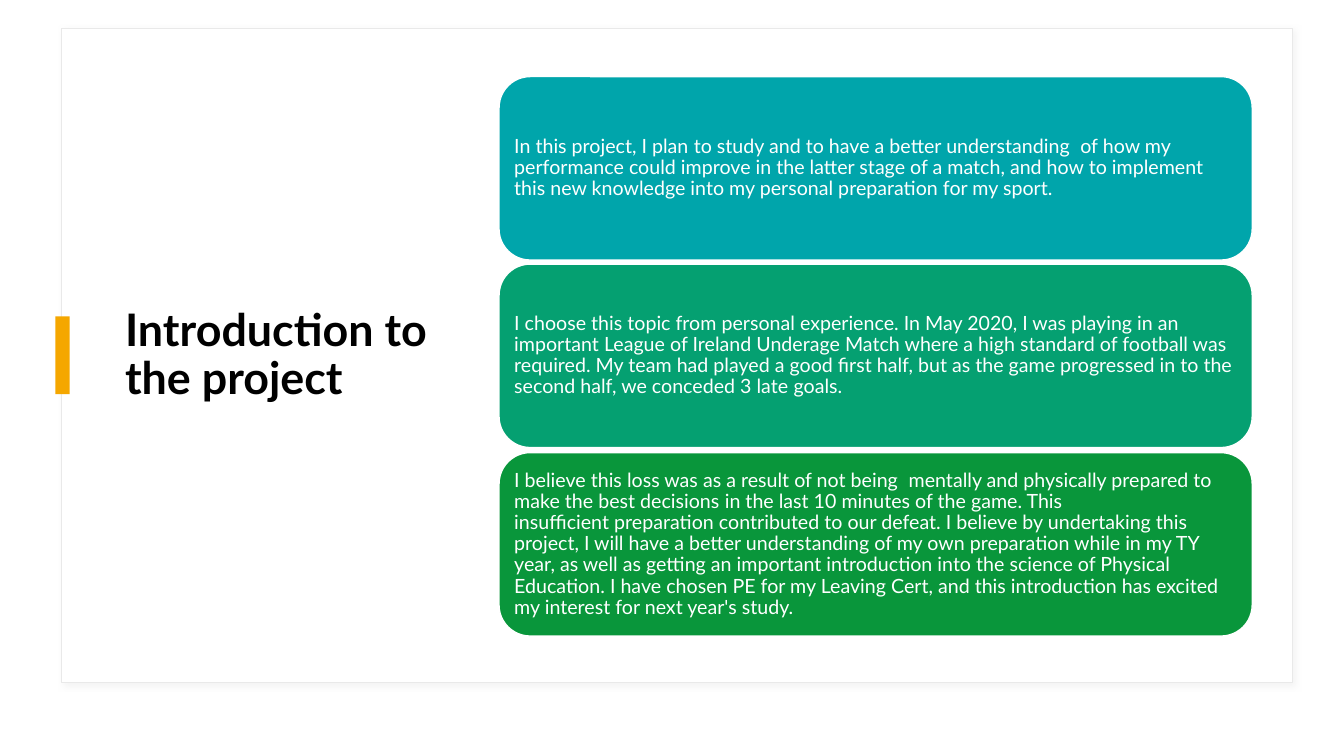
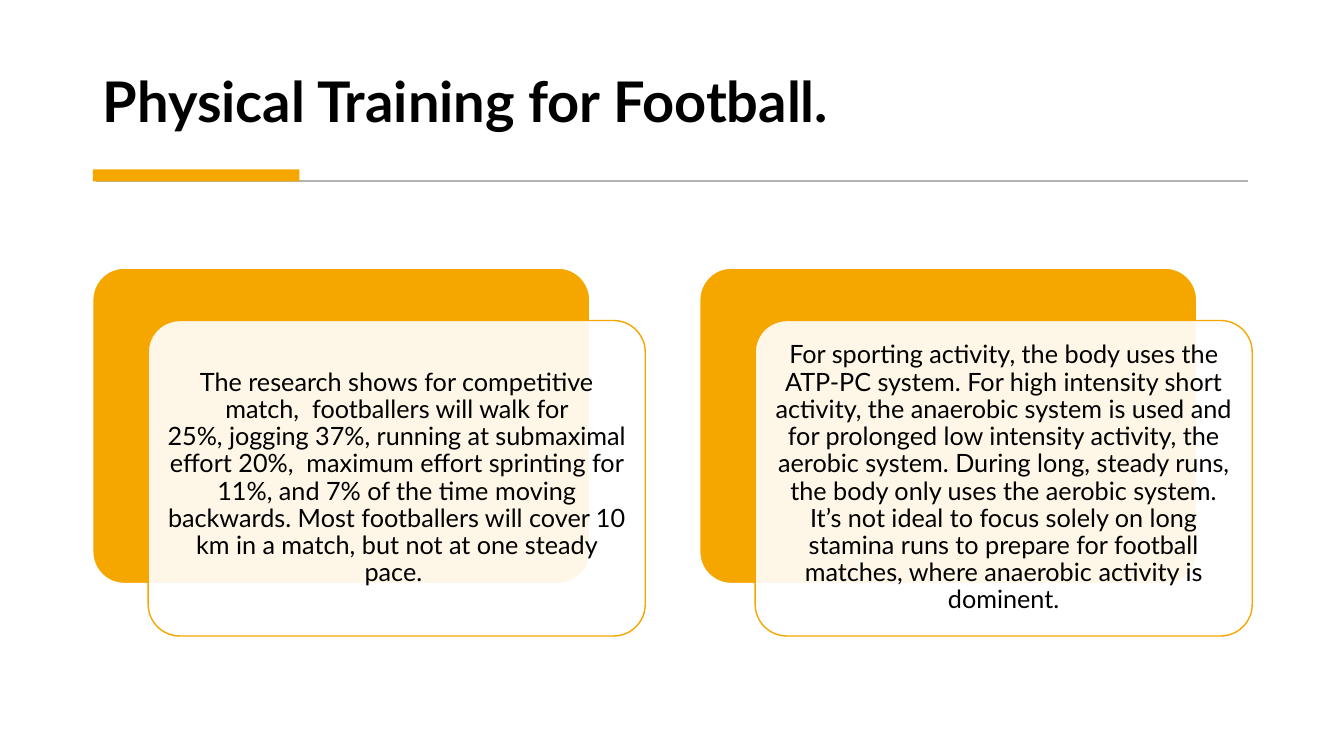
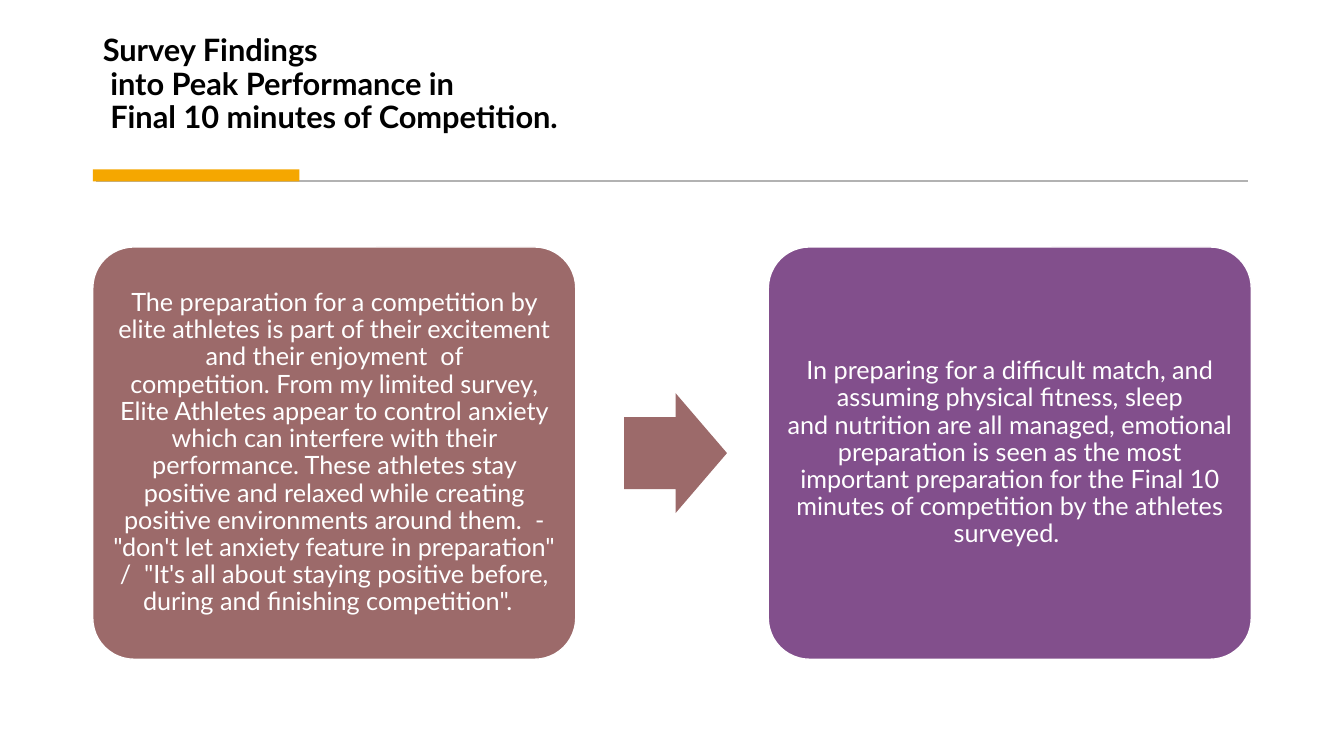
from dataclasses import dataclass
from typing import Optional

from lxml import etree
from pptx import Presentation
from pptx import slide as slides
from pptx import util as u
from pptx.dml.color import RGBColor
from pptx.enum import shapes, text
from pptx.oxml import ns
from pptx.shapes import autoshape
from pptx.text import text as pptx_text

EMU_PER_PX = 9144
HARD_SPACE_MARK = "~"
HARD_SPACE = chr(160)


@dataclass(frozen=True)
class Theme:
    font: str = "Lato"
    ink: str = "000000"
    paper: str = "FFFFFF"
    accent: str = "F5A700"
    rule: str = "B2B2B2"
    frame: str = "E9E9E9"
    shadow: str = "D9D9D9"
    teal: str = "00A5AB"
    jade: str = "05A071"
    green: str = "09963B"
    rose: str = "9C6A6A"
    purple: str = "824F8C"
    side_title: int = 32
    top_title: int = 40
    long_title: int = 22
    intro: int = 14
    body: int = 18


@dataclass(frozen=True)
class Box:
    left: int
    top: int
    width: int
    height: int

    def emu(self) -> tuple[int, int, int, int]:
        return px(self.left), px(self.top), px(self.width), px(self.height)

    def moved(self, right: int = 0, down: int = 0) -> "Box":
        return Box(self.left + right, self.top + down, self.width, self.height)


@dataclass(frozen=True)
class Card:
    words: str
    fill: str


THEME = Theme()
SHAPE = shapes.MSO_SHAPE
ALIGN = text.PP_ALIGN
ANCHOR = text.MSO_ANCHOR

INTRO_CARDS = (
    Card(
        "In this project, I plan~to study and to have a better understanding~ of how my "
        "performance could improve in the latter stage of a match, and how to implement this "
        "new knowledge into my personal preparation for my sport.~",
        THEME.teal,
    ),
    Card(
        "I choose this topic from personal experience. In May 2020, I was playing in an "
        "important League of Ireland Underage Match where a high standard of football was "
        "required. My team had played a good first half, but as the game progressed in to the "
        "second half, we conceded 3 late~goals.~",
        THEME.jade,
    ),
    Card(
        "I believe this loss was as a result of not being~ mentally and physically prepared to "
        "make the best decisions~in the last 10 minutes of the game. This "
        "insufficient~preparation contributed to our defeat. I believe by undertaking this "
        "project, I will have a better understanding of my own preparation while in my TY year, "
        "as well as getting an important introduction into the science of Physical "
        "Education.~I have chosen PE for my Leaving Cert, and this introduction has excited my "
        "interest for next year's study.~",
        THEME.green,
    ),
)

TRAINING_TEXTS = (
    "The research shows for competitive match,~ footballers will walk for 25%,~jogging 37%, "
    "running at submaximal effort~20%,~ maximum effort~sprinting for 11%, and 7% of the "
    "time~moving backwards. Most footballers will cover 10 km in a match,~but not at one "
    "steady pace.~",
    "For sporting activity, the~body uses~the ATP-PC system. For high intensity short "
    "activity, the anaerobic system is used and for prolonged low intensity activity, the "
    "aerobic system.~During long, steady runs, the body only uses the aerobic system. It’s "
    "not ideal to focus solely on long stamina runs to prepare for football matches, where "
    "anaerobic~activity~is dominent.",
)

SURVEY_CARDS = (
    Card(
        "The preparation for a competition by elite athletes is part of their excitement and "
        "their enjoyment~ of competition.~From my limited survey, Elite Athletes appear to "
        "control anxiety which can interfere~with their performance. These athletes stay "
        "positive and relaxed while creating positive environments around them. ~- \"don't let "
        "anxiety feature in preparation\" /~ \"It's all about staying positive before, during "
        "and finishing competition\".~~",
        THEME.rose,
    ),
    Card(
        "In preparing for a difficult match, and assuming physical fitness,~sleep "
        "and~nutrition are all managed, emotional preparation is seen as the most "
        "important~preparation for the Final~10 minutes~of competition by the athletes "
        "surveyed.~",
        THEME.purple,
    ),
)


def px(length: int) -> int:
    return length * EMU_PER_PX


def rgb(color: str) -> RGBColor:
    return RGBColor.from_string(color)


def write_text(frame: pptx_text.TextFrame, words: str, size: int, color: str, align: ALIGN,
               anchor: ANCHOR, bold: bool = False) -> None:
    frame.text = words.replace(HARD_SPACE_MARK, HARD_SPACE)
    frame.word_wrap = True
    frame.auto_size = text.MSO_AUTO_SIZE.NONE
    frame.vertical_anchor = anchor
    for paragraph in frame.paragraphs:
        paragraph.alignment = align
        paragraph.line_spacing = 0.9
        for run in paragraph.runs:
            run.font.name = THEME.font
            run.font.size = u.Pt(size)
            run.font.bold = bold
            run.font.color.rgb = rgb(color)


def add_title(slide: slides.Slide, words: str, box: Box, size: int, anchor: ANCHOR) -> None:
    title = slide.shapes.title
    title.left, title.top, title.width, title.height = box.emu()
    write_text(title.text_frame, words, size, THEME.ink, ALIGN.LEFT, anchor, bold=True)


def add_block(slide: slides.Slide, kind: SHAPE, box: Box, fill: str,
              line: Optional[str] = None) -> autoshape.Shape:
    shape = slide.shapes.add_shape(kind, *box.emu())
    shape.shadow.inherit = False
    shape.fill.solid()
    shape.fill.fore_color.rgb = rgb(fill)
    if line:
        shape.line.color.rgb = rgb(line)
        shape.line.width = u.Pt(1)
    else:
        shape.line.fill.background()
    return shape


def add_card(slide: slides.Slide, box: Box, fill: str, line: str = THEME.paper,
             corner: float = 0.1) -> autoshape.Shape:
    card = add_block(slide, SHAPE.ROUNDED_RECTANGLE, box, fill, line)
    card.adjustments[0] = corner
    return card


def write_card(card: autoshape.Shape, words: str, size: int, color: str, align: ALIGN,
               inset: int) -> None:
    frame = card.text_frame
    frame.margin_left = frame.margin_right = px(inset)
    frame.margin_top = frame.margin_bottom = px(inset)
    write_text(frame, words, size, color, align, ANCHOR.MIDDLE)


def set_opacity(color_element: etree._Element, percent: int) -> None:
    etree.SubElement(color_element, ns.qn("a:alpha"), val=str(percent * 1000))


def add_soft_shadow(shape: autoshape.Shape) -> None:
    effects = shape.element.spPr.find(ns.qn("a:effectLst"))
    shadow = etree.SubElement(
        effects, ns.qn("a:outerShdw"), blurRad=str(u.Pt(4)), dist=str(u.Pt(3)),
        dir=str(45 * 60000), algn="tl", rotWithShape="0",
    )
    set_opacity(etree.SubElement(shadow, ns.qn("a:srgbClr"), val=THEME.shadow), 30)


def add_heading(slide: slides.Slide, words: str, size: int) -> None:
    add_title(slide, words, Box(92, 28, 1149, 111), size, ANCHOR.BOTTOM)
    rule = slide.shapes.add_connector(
        shapes.MSO_CONNECTOR.STRAIGHT, px(95), px(180), px(1238), px(180))
    rule.line.color.rgb = rgb(THEME.rule)
    rule.line.width = u.Pt(1.5)
    etree.SubElement(rule.element.spPr, ns.qn("a:effectLst"))
    add_block(slide, SHAPE.RECTANGLE, Box(92, 168, 205, 12), THEME.accent)


def build_introduction(slide: slides.Slide) -> None:
    frame = add_block(slide, SHAPE.RECTANGLE, Box(61, 28, 1221, 649), THEME.paper, THEME.frame)
    add_soft_shadow(frame)
    slide.shapes.title.element.addprevious(frame.element)
    add_title(slide, "Introduction to the project", Box(114, 55, 327, 596),
              THEME.side_title, ANCHOR.MIDDLE)
    add_block(slide, SHAPE.RECTANGLE, Box(55, 314, 14, 77), THEME.accent)
    first = Box(495, 76, 747, 182)
    for index, card in enumerate(INTRO_CARDS):
        shape = add_card(slide, first.moved(down=index * 373 // 2), card.fill, corner=0.17)
        write_card(shape, card.words, THEME.intro, THEME.paper, ALIGN.LEFT, 6)


def build_training(slide: slides.Slide) -> None:
    add_heading(slide, "Physical Training for Football.", THEME.top_title)
    first = Box(92, 266, 493, 313)
    for index, words in enumerate(TRAINING_TEXTS):
        back = first.moved(right=index * 602)
        add_card(slide, back, THEME.accent)
        front = add_card(slide, back.moved(55, 52), THEME.paper, THEME.accent)
        set_opacity(front.element.spPr.find(ns.qn("a:solidFill"))[0], 90)
        write_card(front, words, THEME.body, THEME.ink, ALIGN.CENTER, 7)


def build_survey(slide: slides.Slide) -> None:
    add_heading(
        slide,
        "Survey Findings\v~into Peak~Performance in\v~Final 10 minutes of Competition.",
        THEME.long_title,
    )
    first = Box(92, 245, 479, 409)
    for index, card in enumerate(SURVEY_CARDS):
        shape = add_card(slide, first.moved(right=index * 670), card.fill)
        write_card(shape, card.words, THEME.body, THEME.paper, ALIGN.CENTER, 7)
    arrow = add_block(slide, SHAPE.RIGHT_ARROW, Box(619, 390, 102, 119), THEME.rose)
    arrow.adjustments[0] = 0.6
    arrow.adjustments[1] = 0.5


def main() -> None:
    presentation = Presentation()
    presentation.slide_width = px(1333)
    presentation.slide_height = px(750)
    title_only = presentation.slide_layouts.get_by_name("Title Only")
    for build in (build_introduction, build_training, build_survey):
        build(presentation.slides.add_slide(title_only))
    presentation.save("out.pptx")


if __name__ == "__main__":
    main()
